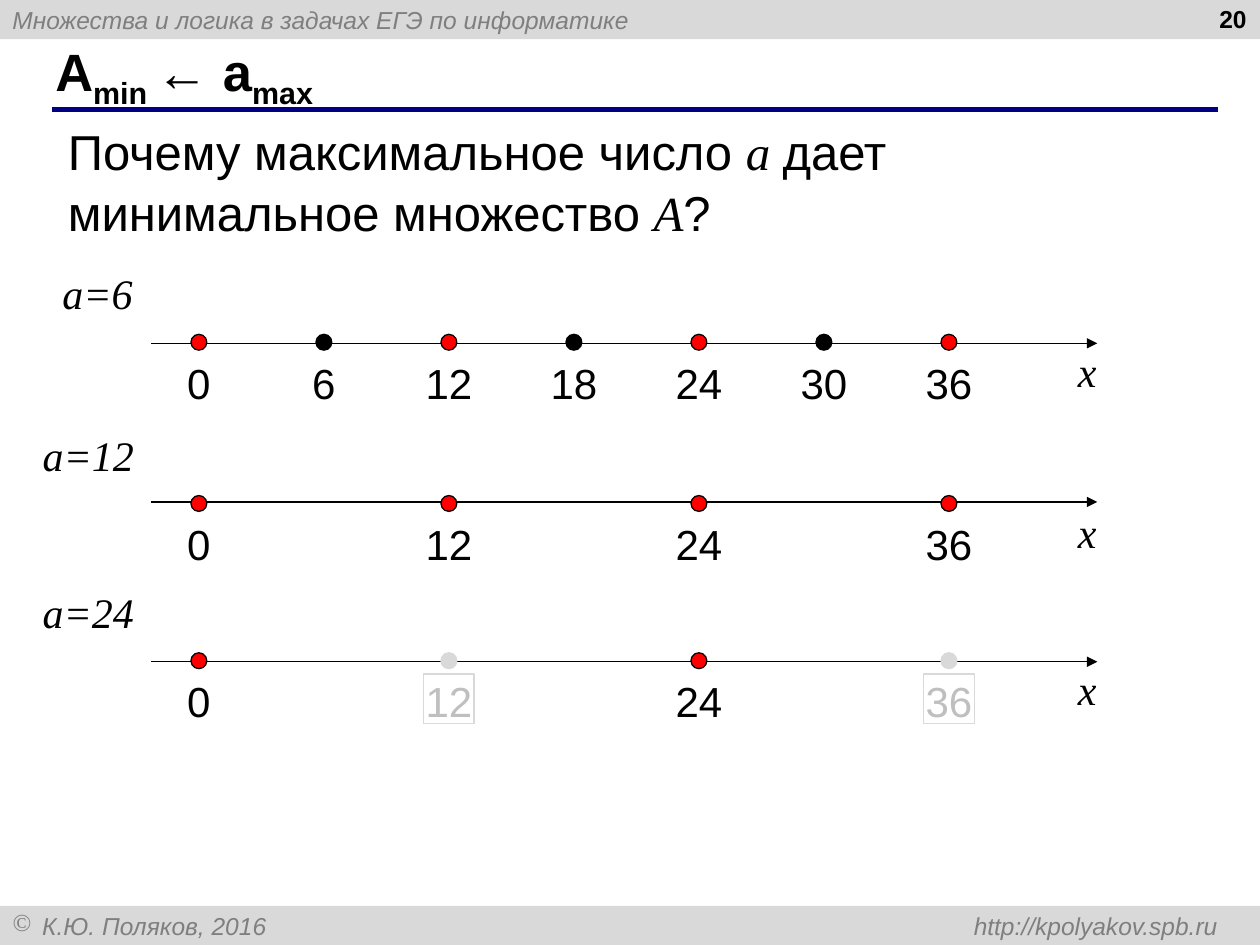
from dataclasses import dataclass

from lxml.etree import SubElement
from pptx import Presentation
from pptx.dml.color import RGBColor
from pptx.enum.shapes import MSO_CONNECTOR as Connector, MSO_SHAPE as Preset
from pptx.enum.text import MSO_ANCHOR as Anchor, MSO_AUTO_SIZE as AutoSize, PP_ALIGN as Align
from pptx.oxml.ns import qn
from pptx.util import Cm, Pt

BLACK = RGBColor(0x00, 0x00, 0x00)
RED = RGBColor(0xFF, 0x00, 0x00)
NAVY = RGBColor(0x00, 0x00, 0x80)
BAR_GRAY = RGBColor(0xD9, 0xD9, 0xD9)
BAR_TEXT = RGBColor(0x7F, 0x7F, 0x7F)
FADED_TEXT = RGBColor(0xBF, 0xBF, 0xBF)

SANS = dict(name="Arial", color=BLACK)
SERIF = dict(name="Times New Roman", color=BLACK, italic=True)
TICK = dict(SANS, size=Pt(24))
VARIABLE = dict(SERIF, size=Pt(24))
BAR = dict(SANS, size=Pt(14), italic=True, color=BAR_TEXT)

# Number line geometry, in centimetres
ORIGIN, UNIT, LAST = 4.01, 0.42, 36
AXIS_START, AXIS_END = 3.05, 22.12
DOT, LABEL_WIDTH, LABEL_HEIGHT = 0.32, 1.02, 0.99


@dataclass
class NumberLine:
    divisor: int
    step: int
    dot_y: float
    axis_y: float
    caption_width: float
    caption_align: Align = Align.LEFT


NUMBER_LINES = [
    NumberLine(6, 6, 6.9, 6.92, 2.21, Align.CENTER),
    NumberLine(12, 12, 10.15, 10.12, 2.77),
    NumberLine(24, 12, 13.32, 13.34, 2.64),
]


def add_run(paragraph, text: str, style: dict, baseline: int = 0) -> None:
    run = paragraph.add_run()
    run.text = text
    for key, value in style.items():
        if key == "color":
            run.font.color.rgb = value
        else:
            setattr(run.font, key, value)
    if baseline:
        run.font._element.set("baseline", str(baseline * 1000))


def add_text(shapes, left: float, top: float, width: float, height: float,
             pieces: list, align: Align = Align.LEFT):
    box = shapes.add_textbox(Cm(left), Cm(top), Cm(width), Cm(height))
    box.text_frame.word_wrap = True
    paragraph = box.text_frame.paragraphs[0]
    paragraph.alignment = align
    for text, style in pieces:
        add_run(paragraph, text, style)
    return box


def add_label(shapes, left: float, top: float, width: float, text: str,
              style: dict, align: Align = Align.CENTER):
    box = add_text(shapes, left, top, width, LABEL_HEIGHT, [(text, style)], align)
    frame = box.text_frame
    frame.margin_left = frame.margin_right = 0
    frame.margin_top = frame.margin_bottom = Cm(0.03)
    return box


def add_line(shapes, start: tuple, end: tuple, color: RGBColor, weight: float,
             arrow: bool = False) -> None:
    line = shapes.add_connector(Connector.STRAIGHT, *map(Cm, start + end))
    line.line.color.rgb = color
    line.line.width = Pt(weight)
    if arrow:
        SubElement(line.line._get_or_add_ln(), qn("a:tailEnd"), type="triangle")
    SubElement(line._element.spPr, qn("a:effectLst"))


def add_bar(shapes, top: float, text: str):
    bar = shapes.add_shape(Preset.RECTANGLE, 0, Cm(top), Cm(25.4), Cm(0.79))
    bar.shadow.inherit = False
    bar.fill.solid()
    bar.fill.fore_color.rgb = BAR_GRAY
    bar.line.fill.background()
    bar.text_frame.vertical_anchor = Anchor.MIDDLE
    paragraph = bar.text_frame.paragraphs[0]
    paragraph.alignment = Align.LEFT
    add_run(paragraph, text, BAR)
    return paragraph


def add_dot(shapes, x: float, y: float, fill: RGBColor, outline: RGBColor) -> None:
    dot = shapes.add_shape(Preset.OVAL, Cm(x - DOT / 2), Cm(y - DOT / 2), Cm(DOT), Cm(DOT))
    dot.shadow.inherit = False
    dot.fill.solid()
    dot.fill.fore_color.rgb = fill
    dot.line.color.rgb = outline
    dot.line.width = Pt(0.75)


def add_number_line(slide, row: NumberLine) -> None:
    shapes = slide.shapes.add_group_shape().shapes
    add_line(shapes, (AXIS_START, row.axis_y), (AXIS_END, row.axis_y), BLACK, 0.75, arrow=True)
    add_label(shapes, 0.86, row.dot_y - 1.53, row.caption_width, f"a={row.divisor}",
              VARIABLE, row.caption_align)
    add_label(shapes, 21.41, row.dot_y + 0.03, LABEL_WIDTH, "x", VARIABLE)

    for value in range(0, LAST + 1, row.step):
        x = ORIGIN + value * UNIT
        faded = value % row.divisor != 0
        label = add_label(shapes, x - LABEL_WIDTH / 2, row.dot_y + 0.27, LABEL_WIDTH, str(value),
                          dict(TICK, color=FADED_TEXT) if faded else TICK)
        if faded:
            label.line.color.rgb = BAR_GRAY
            label.line.width = Pt(0.75)
            add_dot(shapes, x, row.dot_y, BAR_GRAY, BAR_GRAY)
        else:
            add_dot(shapes, x, row.dot_y, BLACK if value % 12 else RED, BLACK)


def add_title(slide) -> None:
    title = slide.shapes.title
    title.left, title.top, title.width, title.height = map(Cm, (0.86, 0.84, 23.27, 1.32))
    frame = title.text_frame
    frame.vertical_anchor = Anchor.MIDDLE
    frame.auto_size = AutoSize.NONE
    paragraph = frame.paragraphs[0]
    paragraph.alignment = Align.LEFT
    style = dict(SANS, size=Pt(30), bold=True)
    for text, baseline in [("A", 0), ("min ", -25), ("← a", 0), ("max", -25)]:
        add_run(paragraph, text, style, baseline)


def add_footer(shapes) -> None:
    paragraph = add_bar(shapes, 18.26, "К.Ю. Поляков, 2016 \thttp://kpolyakov.spb.ru")
    properties = paragraph._p.get_or_add_pPr()
    properties.set("marL", str(Cm(0.6)))
    properties.set("indent", str(-Cm(0.6)))
    SubElement(properties, qn("a:buChar"), char="©")
    tabs = SubElement(properties, qn("a:tabLst"))
    SubElement(tabs, qn("a:tab"), pos=str(Cm(24.41)), algn="r")


def main() -> None:
    presentation = Presentation()
    presentation.slide_width, presentation.slide_height = Cm(25.4), Cm(19.05)
    slide = presentation.slides.add_slide(presentation.slide_layouts[5])
    shapes = slide.shapes

    # Header, footer and title
    add_bar(shapes, 0, "Множества и логика в задачах ЕГЭ по информатике")
    add_footer(shapes)
    add_line(shapes, (1.04, 2.21), (24.56, 2.21), NAVY, 3)
    add_title(slide)
    add_text(shapes, 19.46, -0.05, 5.92, 1.32, [("20", dict(SANS, size=Pt(14), bold=True))],
             Align.RIGHT)

    # Question
    plain, symbol = dict(SANS, size=Pt(28)), dict(SERIF, size=Pt(28))
    question = add_text(shapes, 1.12, 2.26, 23.47, 2.64, [
        ("Почему максимальное число ", plain), ("a ", symbol),
        ("дает минимальное множество ", plain), ("A", symbol), ("?", plain)])
    question.text_frame.paragraphs[0].line_spacing = 1.05

    # Number lines
    for row in NUMBER_LINES:
        add_number_line(slide, row)

    presentation.save("out.pptx")


if __name__ == "__main__":
    main()
